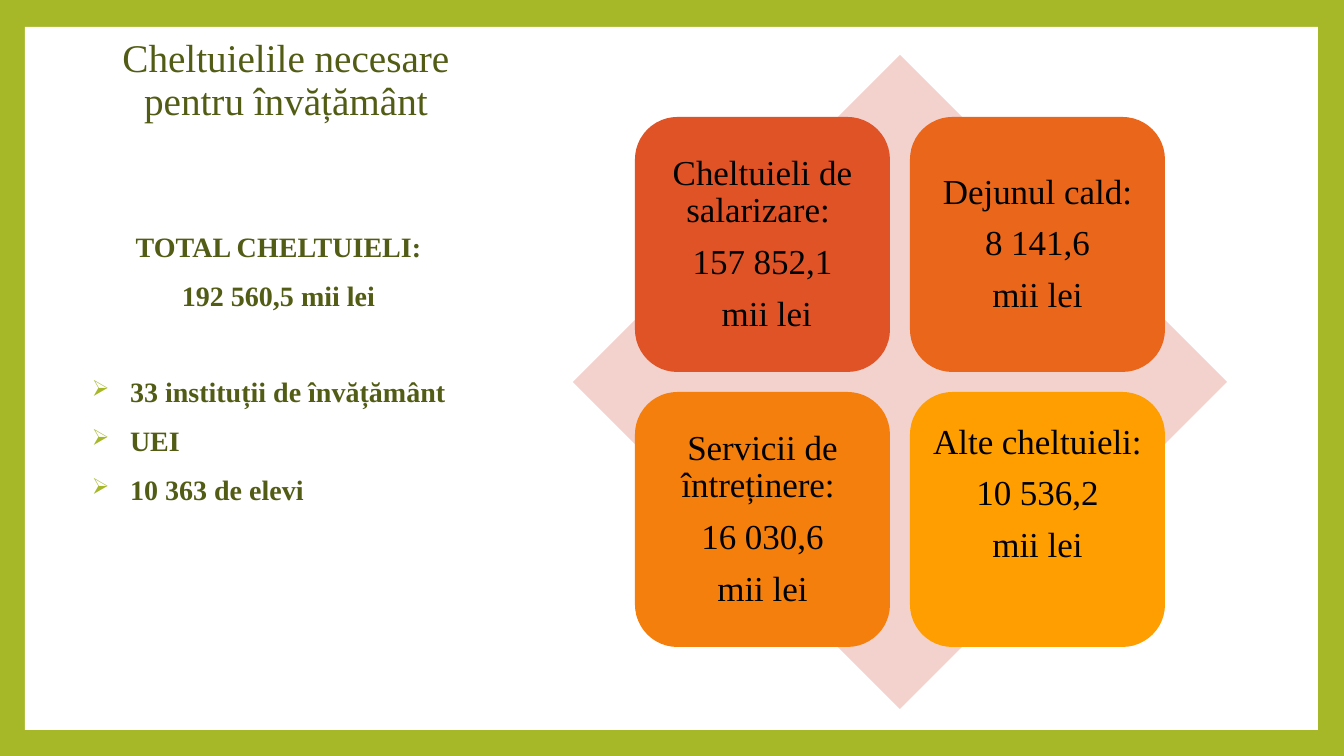
import pptx
import pptx.util
import pptx.dml.color
import pptx.enum.shapes
import pptx.enum.text
import pptx.oxml

FONT = "Times New Roman"
GREEN, OLIVE, BLACK = "A6B727", "535C14", "000000"
TITLE = "Cheltuielile necesare pentru învățământ"
TOTAL = ["TOTAL CHELTUIELI:", "192 560,5 mii lei"]
FACTS = ["33 instituții de învățământ", "UEI", "10 363 de elevi"]
# fill, lines, bottom inset in px
CARDS = [
    ("DF5327", ["Cheltuieli de salarizare: ", "157 852,1", " mii lei"], 10),
    ("E9661A", ["Dejunul cald:", "8 141,6", " mii lei "], 10),
    ("F47F0D", ["Servicii de întreținere: ", "16 030,6", "mii lei"], 10),
    ("FE9E00", ["Alte cheltuieli: ", "10 536,2", "mii lei"], 60),
]
LEFT, TOP, SIDE, STEP = 635, 117, 255, 275

SHAPE = pptx.enum.shapes.MSO_SHAPE
ALIGN = pptx.enum.text.PP_ALIGN
ANCHOR = pptx.enum.text.MSO_ANCHOR
NS = 'xmlns:a="http://schemas.openxmlformats.org/drawingml/2006/main"'


def px(n):
    return pptx.util.Emu(round(n * 914400 / 100.8))


def color(code):
    return pptx.dml.color.RGBColor.from_string(code)


def block(kind, box, fill):
    shape = slide.shapes.add_shape(kind, *map(px, box))
    shape.shadow.inherit = False
    shape.fill.solid()
    shape.fill.fore_color.rgb = color(fill)
    shape.line.fill.background()
    return shape


def frame(shape, anchor, inset):
    """Set wrapping, anchor and insets (left, top, right, bottom)."""
    body = shape.text_frame
    body.word_wrap = True
    body.auto_size = pptx.enum.text.MSO_AUTO_SIZE.NONE
    body.vertical_anchor = anchor
    (body.margin_left, body.margin_top,
     body.margin_right, body.margin_bottom) = map(px, inset)
    return body


def write(body, lines, size, tint, bold=False, align=ALIGN.CENTER,
          lead=1.0, before=0, after=0):
    """Add one paragraph per line and return them."""
    paras = []
    for line in lines:
        first = body.paragraphs[0]
        para = body.add_paragraph() if first.runs else first
        para.alignment = align
        para.line_spacing = lead
        para.space_before = pptx.util.Pt(before)
        para.space_after = pptx.util.Pt(after)
        run = para.add_run()
        run.text = line
        run.font.name = FONT
        run.font.size = pptx.util.Pt(size)
        run.font.bold = bold
        run.font.color.rgb = color(tint)
        paras.append(para)
    return paras


def bullet(para):
    props = para._p.get_or_add_pPr()
    props.set("marL", str(px(38)))
    props.set("indent", str(px(-38)))
    for tag in (
        f'<a:buClr {NS}><a:srgbClr val="{GREEN}"/></a:buClr>',
        f'<a:buSzPct {NS} val="80000"/>',
        f'<a:buFont {NS} typeface="Wingdings"/>',
        f'<a:buChar {NS} char="➢"/>',
    ):
        # Wingdings encodes this arrow as Ø, so the plain glyph needs no font
        if "buFont" not in tag:
            props.append(pptx.oxml.parse_xml(tag))


deck = pptx.Presentation()
deck.slide_width, deck.slide_height = px(1344), px(756)
slide = deck.slides.add_slide(deck.slide_layouts[5])
slide.background.fill.solid()
slide.background.fill.fore_color.rgb = color(GREEN)

block(SHAPE.RECTANGLE, (25, 27, 1293, 703), "FFFFFF")

title = slide.shapes.title
title.left, title.top, title.width, title.height = map(px, (86, 39, 400, 90))
write(frame(title, ANCHOR.TOP, (0, 0, 0, 0)), [TITLE], 28, OLIVE, lead=0.9)
slide.shapes._spTree.append(title._element)

block(SHAPE.DIAMOND, (573, 55, 654, 654), "F3D1CD")
for i, (fill, lines, low) in enumerate(CARDS):
    row, col = divmod(i, 2)
    card = block(SHAPE.ROUNDED_RECTANGLE,
                 (LEFT + col * STEP, TOP + row * STEP, SIDE, SIDE), fill)
    body = frame(card, ANCHOR.MIDDLE, (10, 10, 10, low))
    write(body, lines, 25, BLACK, lead=0.9, after=10)

notes = slide.shapes.add_textbox(*map(px, (82, 224, 393, 333)))
body = frame(notes, ANCHOR.TOP, (10, 5, 10, 5))
total = write(body, TOTAL, 20, OLIVE, True, before=11)
total[0].space_before = pptx.util.Pt(0)
facts = write(body, FACTS, 20, OLIVE, True, ALIGN.LEFT, before=11)
facts[0].space_before = pptx.util.Pt(45)
for para in facts:
    bullet(para)

deck.save("out.pptx")
